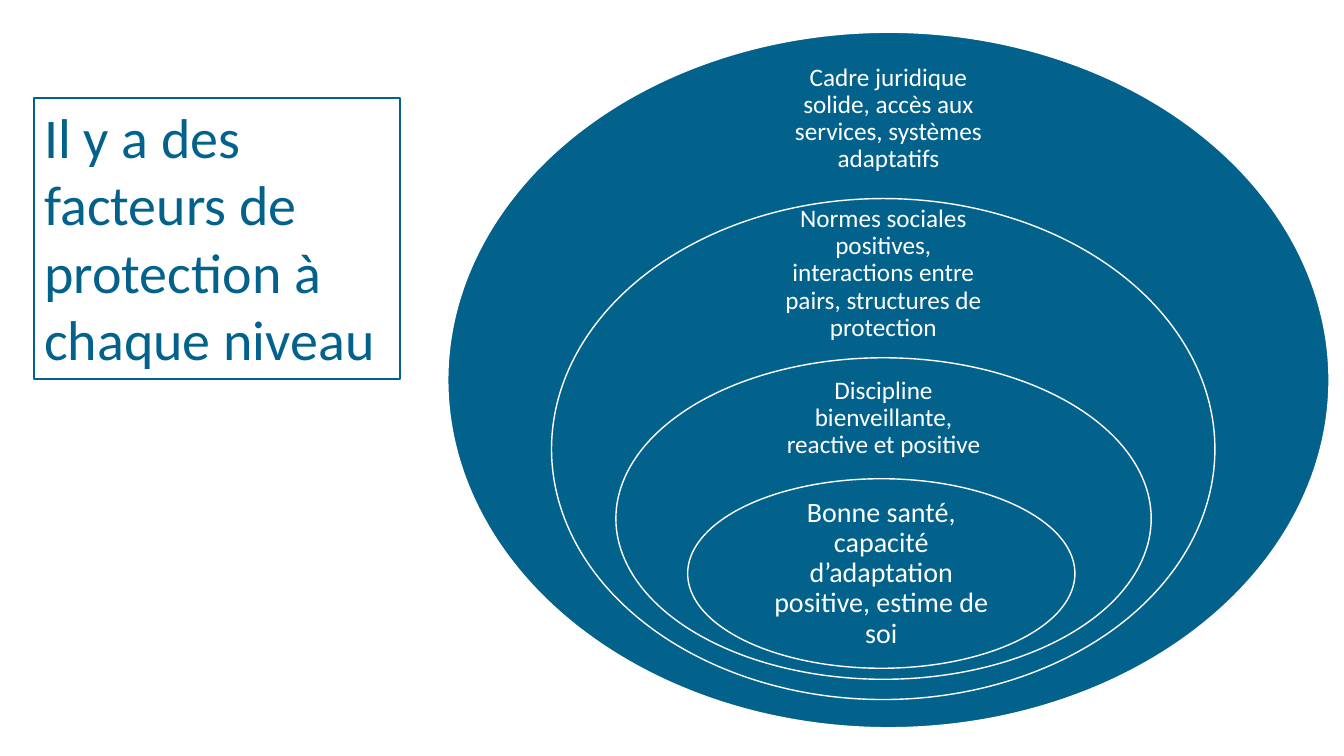
import pptx
import pptx.util
import pptx.dml.color
import pptx.enum.shapes
import pptx.enum.text

BLUE = "02628C"
WHITE = "FFFFFF"
FONT = "Calibri"
SLIDE_WIDTH = pptx.util.Inches(13.33)
SLIDE_HEIGHT = pptx.util.Inches(7.5)

HEADING = "Il y a des facteurs de protection à chaque niveau"
HEADING_AREA = (2.55, 12.93, 27.23, 37.2)

LEVELS = [
    {"factors": "Cadre juridique solide, accès aux services, systèmes adaptatifs",
     "centre": 66.1, "ring": (4.27, 65.57, 92), "label": (8.8, 18.38, 13.87),
     "size": 18, "inset": 0.14},
    {"factors": "Normes sociales positives, interactions entre pairs, structures de protection",
     "centre": 65.72, "ring": (26.27, 49.36, 66.27), "label": (30.27, 17.25, 11.87),
     "size": 18, "inset": 0.14},
    {"factors": "Discipline bienveillante, reactive et positive",
     "centre": 65.74, "ring": (47.33, 39.83, 42.53), "label": (50.53, 18.6, 9.6),
     "size": 18, "inset": 0.14},
    {"factors": "Bonne santé, capacité d’adaptation positive, estime de soi",
     "centre": 65.57, "ring": (63.33, 28.81, 25.07), "label": (69.6, 20.41, 12.53),
     "size": 20, "inset": 0.16},
]


def colour(value):
    return pptx.dml.color.RGBColor.from_string(value)


def area(left, top, width, height):
    return (int(SLIDE_WIDTH * left / 100), int(SLIDE_HEIGHT * top / 100),
            int(SLIDE_WIDTH * width / 100), int(SLIDE_HEIGHT * height / 100))


def centred_area(centre, top, width, height):
    return area(centre - width / 2, top, width, height)


def outline(shape, value, points):
    shape.line.color.rgb = colour(value)
    shape.line.width = pptx.util.Pt(points)


def write(paragraph, words, size, value, alignment):
    paragraph.alignment = alignment
    run = paragraph.add_run()
    run.text = words
    run.font.name = FONT
    run.font.size = pptx.util.Pt(size)
    run.font.color.rgb = colour(value)


def add_heading(slide):
    heading = slide.shapes.title
    heading.left, heading.top, heading.width, heading.height = area(*HEADING_AREA)
    outline(heading, BLUE, 1.75)
    frame = heading.text_frame
    frame.word_wrap = True
    frame.auto_size = pptx.enum.text.MSO_AUTO_SIZE.SHAPE_TO_FIT_TEXT
    frame.vertical_anchor = pptx.enum.text.MSO_ANCHOR.TOP
    write(frame.paragraphs[0], HEADING, 40, BLUE, pptx.enum.text.PP_ALIGN.LEFT)


def add_level(slide, level):
    ring = slide.shapes.add_shape(
        pptx.enum.shapes.MSO_SHAPE.OVAL, *centred_area(level["centre"], *level["ring"]))
    ring.shadow.inherit = False
    ring.fill.solid()
    ring.fill.fore_color.rgb = colour(BLUE)
    outline(ring, WHITE, 1)

    label = slide.shapes.add_textbox(*centred_area(level["centre"], *level["label"]))
    frame = label.text_frame
    frame.word_wrap = True
    frame.vertical_anchor = pptx.enum.text.MSO_ANCHOR.MIDDLE
    inset = pptx.util.Inches(level["inset"])
    frame.margin_left = frame.margin_top = frame.margin_right = frame.margin_bottom = inset
    factors = frame.paragraphs[0]
    factors.line_spacing = 0.9
    write(factors, level["factors"], level["size"], WHITE, pptx.enum.text.PP_ALIGN.CENTER)


def main():
    deck = pptx.Presentation()
    deck.slide_width = SLIDE_WIDTH
    deck.slide_height = SLIDE_HEIGHT
    slide = deck.slides.add_slide(deck.slide_layouts.get_by_name("Title Only"))
    add_heading(slide)
    for level in LEVELS:
        add_level(slide, level)
    deck.save("out.pptx")


if __name__ == "__main__":
    main()
